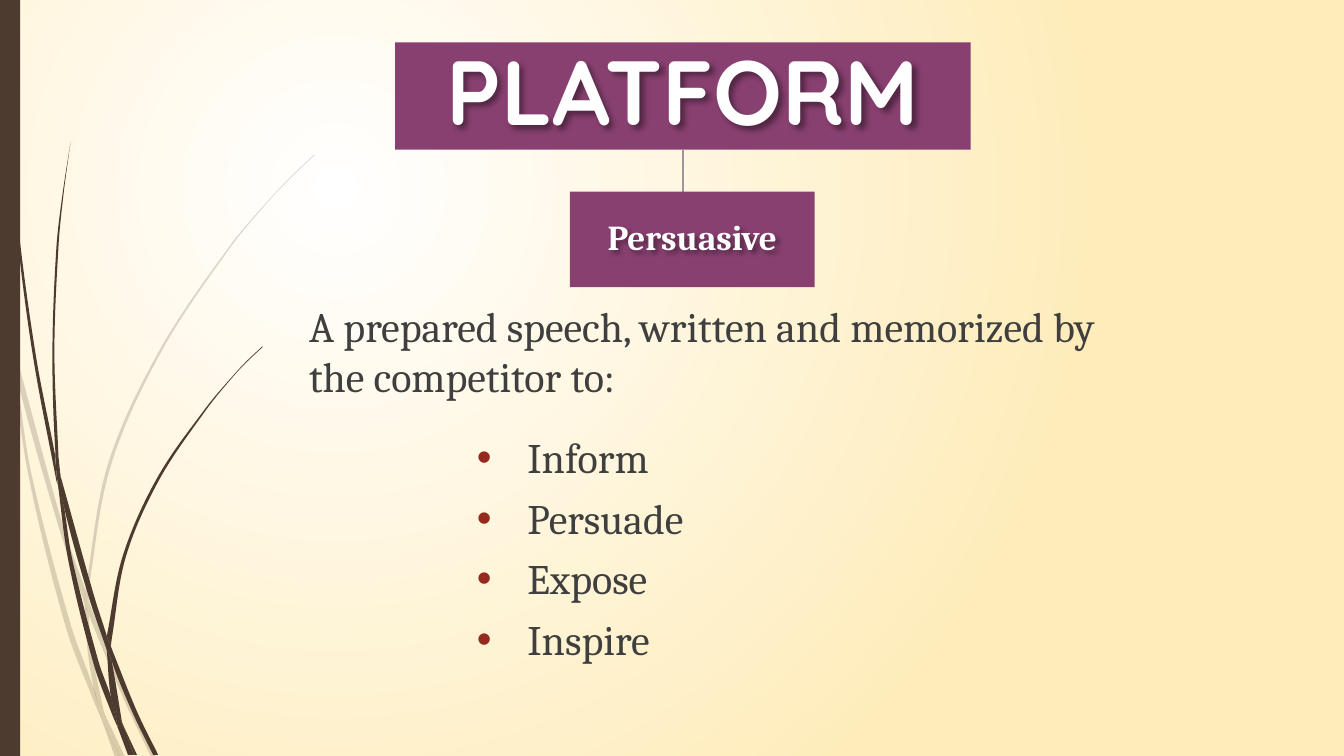
from lxml import etree
from pptx import Presentation
from pptx.dml.color import RGBColor
from pptx.enum.shapes import MSO_CONNECTOR, MSO_SHAPE
from pptx.enum.text import MSO_ANCHOR, PP_ALIGN
from pptx.oxml.ns import qn
from pptx.util import Cm, Pt

RECTANGLE = MSO_SHAPE.RECTANGLE
STRAIGHT = MSO_CONNECTOR.STRAIGHT
TOP, MIDDLE = MSO_ANCHOR.TOP, MSO_ANCHOR.MIDDLE
LEFT, CENTER = PP_ALIGN.LEFT, PP_ALIGN.CENTER

WHITE = RGBColor(0xFF, 0xFF, 0xFF)
CREAM = RGBColor(0xFE, 0xEC, 0xBA)
BROWN = RGBColor(0x4E, 0x3B, 0x30)
PLUM = RGBColor(0x88, 0x40, 0x70)
GREY = RGBColor(0xA0, 0x96, 0x97)
INK = RGBColor(0x3F, 0x3F, 0x3F)
RUST = RGBColor(0x93, 0x2A, 0x1D)

BODY_FONT = {"name": "Cambria", "size": Pt(30)}
TITLE_FONT = {"name": "Quicksand", "size": Pt(65), "bold": True}
BRANCH_FONT = {"name": "Cambria", "size": Pt(25), "bold": True}
PURPOSES = ["Inform", "Persuade", "Expose", "Inspire"]

BLADE_UNIT = Cm(0.0254)
PALE_BLADES = [
    ([(11, 350), (9, 322), (0, 282)], [(0, 299), (10, 344)]),
    ([(14, 345), (17, 376), (58, 522), (84, 599)], [(85, 586), (62, 520), (14, 345)]),
    ([(88, 610), (123, 694), (150, 751)], [(155, 751), (127, 692), (92, 607), (88, 596)]),
    ([(124, 751), (105, 711)], [(119, 751)]),
    ([(11, 350), (28, 470), (65, 621), (92, 693), (101, 714)],
     [(99, 707), (93, 683), (70, 619), (31, 469), (17, 376)]),
    ([(84, 599), (87, 646), (93, 683), (96, 692), (105, 711)],
     [(103, 706), (91, 646), (88, 610), (88, 608)]),
    ([(312, 153), (289, 175), (268, 197), (228, 244), (158, 348), (107, 461), (85, 584), (85, 586)],
     [(88, 596), (88, 584), (110, 462), (160, 349), (229, 245), (268, 198), (290, 175), (312, 154)]),
    ([(101, 714), (114, 751)], [(119, 751)]),
    ([(85, 586), (84, 599), (88, 608)], [(88, 610), (88, 596)]),
    ([(93, 683), (99, 707), (101, 714), (119, 751)], [(105, 711), (96, 692)]),
]
DARK_BLADES = [
    ([(3, 0), (4, 48), (7, 110), (17, 233), (33, 355), (56, 477), (57, 481)],
     [(55, 457), (55, 453), (36, 355), (19, 232), (8, 109), (5, 48), (4, 0)]),
    ([(60, 472), (64, 505), (88, 592), (106, 645)], [(106, 633), (106, 631), (93, 590), (60, 472)]),
    ([(110, 641), (111, 656), (132, 708), (152, 749)], [(157, 749), (136, 706), (113, 649), (110, 641)]),
    ([(57, 477), (68, 557), (93, 659), (111, 708), (117, 722)],
     [(116, 717), (110, 691), (98, 657), (72, 556), (64, 505)]),
    ([(70, 141), (62, 193), (56, 245), (52, 349), (55, 449), (60, 472)],
     [(58, 453), (54, 349), (58, 245), (63, 193), (70, 141)]),
    ([(122, 719), (133, 749)], [(136, 749)]),
    ([(55, 449), (55, 453), (57, 477), (64, 505)], [(60, 472)]),
    ([(260, 344), (245, 358), (231, 373), (204, 405), (156, 474), (122, 551), (106, 631)],
     [(110, 641), (111, 633), (125, 552), (158, 476), (205, 406), (231, 374), (245, 359), (261, 344)]),
    ([(117, 722), (127, 749)], [(131, 749)]),
    ([(106, 645), (110, 691), (116, 706), (122, 719)], [(121, 716), (111, 656), (109, 651)]),
    ([(106, 631), (106, 645), (109, 651), (111, 656)], [(110, 641)]),
    ([(110, 691), (116, 717), (117, 722), (130, 749)], [(133, 749), (122, 719), (116, 706)]),
]


def add_child(parent, tag, **attributes):
    """Append an XML element with the given attributes."""
    return etree.SubElement(parent, qn(tag), {key: str(value) for key, value in attributes.items()})


def set_background(page):
    """Fill the page with a radial glow from white to cream."""
    fill = page.background.fill
    fill.gradient()
    for stop, position, color in zip(fill.gradient_stops, (0, 1), (WHITE, CREAM)):
        stop.position, stop.color.rgb = position, color
    gradient = page.element.find(".//" + qn("a:gradFill"))
    radial = etree.Element(qn("a:path"), {"path": "circle"})
    add_child(radial, "a:fillToRect", l=50000, t=50000, r=100000, b=100000)
    gradient.replace(gradient.find(qn("a:lin")), radial)


def paint(shape, color):
    """Give a shape a plain fill without line or shadow."""
    shape.shadow.inherit = False
    shape.fill.solid()
    shape.fill.fore_color.rgb = color
    shape.line.fill.background()


def curve_points(edge):
    """Return the start of an edge, then two handles and an end for each curve."""
    dots = [complex(*point) * BLADE_UNIT for point in edge]
    chords = [after - before for before, after in zip([dots[0], *dots], [*dots[1:], dots[-1]])]
    points = dots[:1]
    for start, end, leaving, arriving in zip(dots, dots[1:], chords, chords[1:]):
        reach = abs(end - start) / 3
        points += [start + leaving / abs(leaving) * reach, end - arriving / abs(arriving) * reach, end]
    return points


def add_blade(shapes, edges, opacity):
    """Draw a curved blade of grass between its two edges."""
    near, far = map(curve_points, edges)
    points = [(dot.real, dot.imag) for dot in [*near, near[-1], far[0], *far]]
    builder = shapes.build_freeform(*points[0])
    builder.add_line_segments(points[1:], close=True)
    blade = builder.convert_to_shape()
    paint(blade, BROWN)
    lines = list(blade.element.iter(qn("a:lnTo")))
    for first in range(0, len(lines), 3):
        curve = etree.Element(qn("a:cubicBezTo"))
        lines[first].addprevious(curve)
        for line in lines[first:first + 3]:
            curve.append(line[0])
            line.getparent().remove(line)
    if opacity < 100:
        color = blade.element.spPr.find(".//" + qn("a:srgbClr"))
        add_child(color, "a:alpha", val=opacity * 1000)


def add_block(page, place, color):
    """Add a plain rectangle."""
    block = page.shapes.add_shape(RECTANGLE, *map(Cm, place))
    paint(block, color)
    return block


def add_box(page, place, anchor, side, edge):
    """Add a wrapping text box with the given anchor and insets."""
    box = page.shapes.add_textbox(*map(Cm, place))
    values = {"word_wrap": True, "vertical_anchor": anchor, "margin_left": Cm(side),
              "margin_right": Cm(side), "margin_top": Cm(edge), "margin_bottom": Cm(edge)}
    for name, value in values.items():
        setattr(box.text_frame, name, value)
    return box


def write(para, text, font, color, align=LEFT, spacing=1.0):
    """Write one formatted span into a paragraph."""
    para.alignment, para.line_spacing = align, spacing
    span = para.add_run()
    span.text = text
    for name, value in font.items():
        setattr(span.font, name, value)
    span.font.color.rgb = color


def add_label(page, place, text, font):
    """Add a plum block with a centred, shadowed label."""
    block = add_block(page, place, PLUM)
    box = add_box(page, place, MIDDLE, 0.03, 0.03)
    write(box.text_frame.paragraphs[0], text, font, WHITE, CENTER, 0.9)
    effects = add_child(box.element.spPr, "a:effectLst")
    shadow = add_child(effects, "a:outerShdw", blurRad=Pt(4), dist=Pt(3), dir=2700000)
    add_child(add_child(shadow, "a:srgbClr", val="000000"), "a:alpha", val=40000)
    return block


def add_stem(page, root, bottom):
    """Run a line from the middle of the root block down to its branch."""
    middle = root.left + root.width // 2
    stem = page.shapes.add_connector(STRAIGHT, middle, root.top + root.height, middle, bottom)
    stem.begin_connect(root, 2)
    stem.line.width = Pt(1.25)
    stem.line.color.rgb = GREY
    add_child(stem.element.spPr, "a:effectLst")


def add_bullets(page, place, items):
    """Add a bulleted list."""
    frame = add_box(page, place, TOP, 0.25, 0.13).text_frame
    for index, item in enumerate(items):
        para = frame.add_paragraph() if index else frame.paragraphs[0]
        write(para, item, BODY_FONT, INK, spacing=1.2)
        properties = para._p.get_or_add_pPr()
        properties.set("marL", str(Cm(1.27)))
        properties.set("indent", str(-Cm(1.27)))
        add_child(add_child(properties, "a:buClr"), "a:srgbClr", val=RUST)
        add_child(properties, "a:buFont", typeface="Arial")
        add_child(properties, "a:buChar", char="•")


def main():
    """Build the deck and save it."""
    deck = Presentation()
    deck.slide_width, deck.slide_height = Cm(33.87), Cm(19.05)
    page = deck.slides.add_slide(deck.slide_layouts[6])
    set_background(page)
    for blades, opacity in ((PALE_BLADES, 20), (DARK_BLADES, 100)):
        tuft = page.shapes.add_group_shape()
        for edges in blades:
            add_blade(tuft.shapes, edges, opacity)
    add_block(page, (0, 0, 0.51, 19.05), BROWN)
    add_bullets(page, (11.77, 10.5, 22.1, 8.53), PURPOSES)
    root = add_label(page, (9.96, 1.07, 14.5, 2.7), "PLATFORM", TITLE_FONT)
    add_stem(page, root, Cm(4.98))
    add_label(page, (14.36, 4.83, 6.17, 2.41), "Persuasive", BRANCH_FONT)
    intro = add_box(page, (7.54, 7.46, 21.08, 2.77), MIDDLE, 0.25, 0.25)
    write(intro.text_frame.paragraphs[0],
          "A prepared speech, written and memorized by the competitor to:", BODY_FONT, INK)
    deck.save("out.pptx")


if __name__ == "__main__":
    main()
